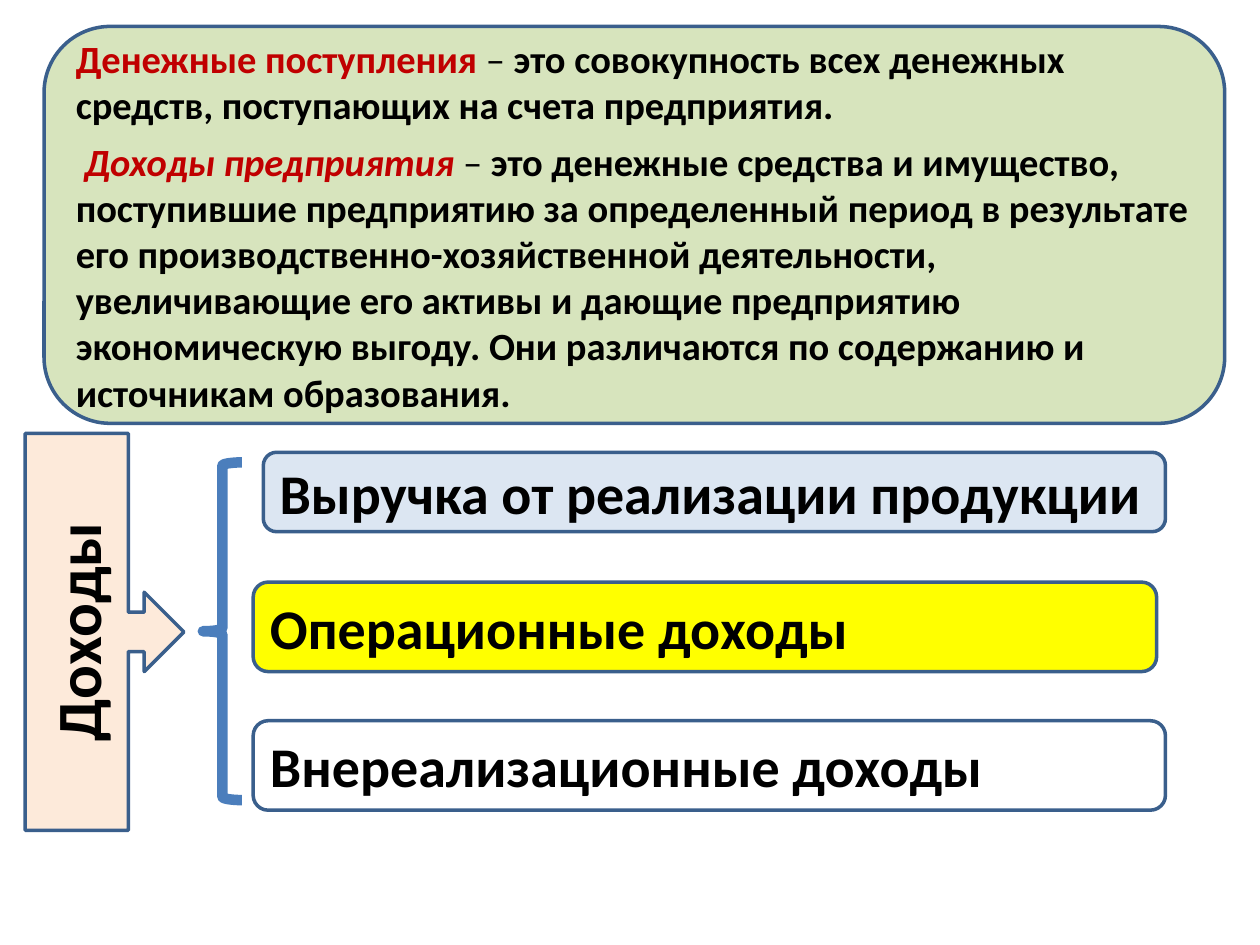
from pptx import Presentation
from pptx.dml.color import RGBColor
from pptx.enum.shapes import MSO_SHAPE
from pptx.enum.text import MSO_ANCHOR, PP_ALIGN
from pptx.util import Inches, Pt

COLORS = {
    "ink": "000000", "red": "C00000", "edge": "3A5F8C", "brace": "4B7EBC",
    "green": "D7E4BD", "peach": "FDEADA", "blue": "DCE6F2",
    "yellow": "FFFF00", "white": "FFFFFF",
}
COLS, ROWS = 100, 75


def color(name):
    return RGBColor.from_string(COLORS[name])


class Board:
    """Holds the style and the current slide; lengths are grid columns and rows."""
    face = "Calibri"

    def __init__(self, deck):
        self.slide = deck.slides.add_slide(deck.slide_layouts[6])
        self.col = deck.slide_width / COLS
        self.row = deck.slide_height / ROWS

    def shape(self, kind, left, top, width, height, fill=None, edge="edge", line=2):
        item = self.slide.shapes.add_shape(
            kind, round(left * self.col), round(top * self.row),
            round(width * self.col), round(height * self.row))
        item.shadow.inherit = False
        if fill:
            item.fill.solid()
            item.fill.fore_color.rgb = color(fill)
        else:
            item.fill.background()
        item.line.color.rgb = color(edge)
        item.line.width = Pt(line)
        return item

    def text(self, item, paras, size, align=PP_ALIGN.LEFT, after=0):
        """Each paragraph is a list of (text, colour, bold, italic) runs."""
        frame = item.text_frame
        frame.word_wrap = True
        frame.vertical_anchor = MSO_ANCHOR.MIDDLE
        for i, runs in enumerate(paras):
            para = frame.add_paragraph() if i else frame.paragraphs[0]
            para.alignment = align
            para.space_after = Pt(after)
            para.font.name, para.font.size = self.face, Pt(size)
            for words, ink, bold, slant in runs:
                run = para.add_run()
                run.text = words
                run.font.color.rgb = color(ink)
                run.font.bold, run.font.italic = bold, slant

    def label(self, item, words, size, align=PP_ALIGN.LEFT):
        self.text(item, [[(words, "ink", True, False)]], size, align)


def main():
    deck = Presentation()
    deck.slide_width, deck.slide_height = Inches(10), Inches(7.5)
    board = Board(deck)

    # Definitions
    dash = ("– ", "ink", False, False)
    panel = board.shape(MSO_SHAPE.ROUNDED_RECTANGLE, 3.5, 2.1, 93.7, 31.5, "green")
    board.text(panel, [
        [("Денежные поступления ", "red", True, False), dash,
         ("это совокупность всех денежных средств, поступающих на счета "
          "предприятия.", "ink", True, False)],
        [(" ", "ink", False, True),
         ("Доходы предприятия ", "red", True, True), dash,
         ("это денежные средства и имущество, поступившие предприятию за "
          "определенный период в результате его производственно-хозяйственной "
          "деятельности, увеличивающие его активы и дающие предприятию "
          "экономическую выгоду. Они различаются по содержанию и источникам "
          "образования.", "ink", True, False)],
    ], 22, after=6)

    # Income callout, its text turned upwards
    income = board.shape(MSO_SHAPE.RIGHT_ARROW_CALLOUT, 2, 34.4, 12.6, 31.5, "peach")
    board.label(income, "Доходы", 36, PP_ALIGN.CENTER)
    income.text_frame._txBody.bodyPr.set("vert", "vert270")

    # Kinds of income
    for words, fill, *box in (
        ("Выручка от реализации продукции", "blue", 20.9, 35.9, 71.6, 6.3),
        ("Операционные доходы", "yellow", 20.1, 46.2, 71.7, 7.1),
        ("Внереализационные доходы", "white", 20.1, 57.2, 72.4, 7.1),
    ):
        board.label(board.shape(MSO_SHAPE.ROUNDED_RECTANGLE, *box, fill), words, 32)

    # Brace
    board.shape(MSO_SHAPE.LEFT_BRACE, 16.1, 36.7, 3.1, 26.8, edge="brace", line=6)

    deck.save("out.pptx")


if __name__ == "__main__":
    main()
